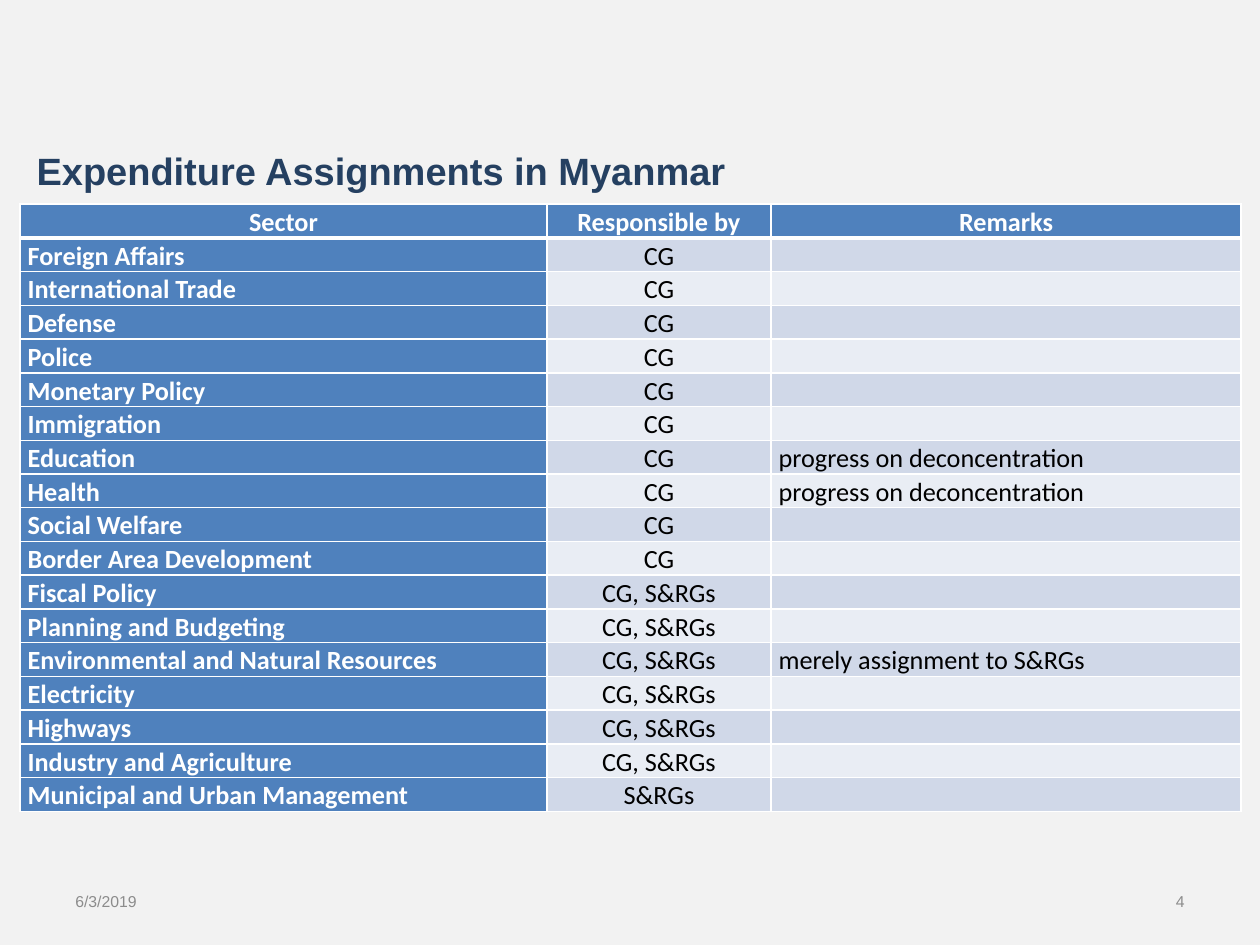
from dataclasses import dataclass

from lxml.etree import SubElement
from pptx import Presentation
from pptx.dml.color import RGBColor as Rgb
from pptx.enum.text import MSO_ANCHOR as Anchor, PP_ALIGN as Align
from pptx.oxml.ns import qn
from pptx.util import Inches, Pt


@dataclass(frozen=True)
class Theme:
    back: str = "F2F2F2"
    navy: str = "254061"
    grey: str = "8C8C8C"
    blue: str = "4F81BD"
    white: str = "FFFFFF"
    black: str = "000000"
    bands: tuple = ("D0D8E8", "E9EDF4")
    head: str = "Arial"
    body: str = "Calibri"
    title: float = 21.7
    cell: float = 15
    small: float = 9


THEME = Theme()
HEADS = ("Sector", "Responsible by", "Remarks")
WIDTHS = (4.18, 1.78, 3.73)
HEIGHT = 0.26

# Sectors grouped by the level of government in charge
GROUPS = {
    "CG": ("Foreign Affairs", "International Trade", "Defense", "Police",
           "Monetary Policy", "Immigration", "Education", "Health",
           "Social Welfare", "Border Area Development"),
    "CG, S&RGs": ("Fiscal Policy", "Planning and Budgeting",
                  "Environmental and Natural Resources", "Electricity",
                  "Highways", "Industry and Agriculture"),
    "S&RGs": ("Municipal and Urban Management",),
}
NOTES = {
    "Education": "progress on deconcentration",
    "Health": "progress on deconcentration",
    "Environmental and Natural Resources": "merely assignment to S&RGs",
}


def assign(item, values):
    for name, value in values.items():
        setattr(item, name, value)


def write(part, text, face, size, color, bold=False, align=Align.LEFT):
    part.alignment = align
    if not text:
        # An empty cell still needs its type size to keep the row low
        SubElement(part._p, qn("a:endParaRPr"), sz=str(int(size * 100)))
        return
    run = part.add_run()
    run.text = text
    assign(run.font, {"name": face, "size": Pt(size), "bold": bold})
    run.font.color.rgb = Rgb.from_string(color)


def add_title(slide, text):
    title = slide.shapes.title
    assign(title, {"left": Inches(0.19), "top": Inches(1.12),
                   "width": Inches(9), "height": Inches(0.4)})
    assign(title.text_frame, {"vertical_anchor": Anchor.TOP,
                              "word_wrap": True})
    write(title.text_frame.paragraphs[0], text, THEME.head, THEME.title,
          THEME.navy, True)


def add_foot(slide, text, left, align):
    box = slide.shapes.add_textbox(
        Inches(left), Inches(6.95), Inches(2.33), Inches(0.4))
    assign(box.text_frame, {"vertical_anchor": Anchor.MIDDLE,
                            "word_wrap": True})
    write(box.text_frame.paragraphs[0], text, THEME.head, THEME.small,
          THEME.grey, align=align)


def add_edge(cell, side, points):
    line = SubElement(cell._tc.get_or_add_tcPr(), qn(f"a:ln{side}"),
                      w=str(Pt(points)))
    fill = SubElement(line, qn("a:solidFill"))
    SubElement(fill, qn("a:srgbClr"), val=THEME.white)


def style_cell(cell, text, row, col):
    strong = row == 0 or col == 0
    # Borders go first, as the schema puts them ahead of the fill
    thick = {"T": 3 if row == 1 else 1, "B": 3 if row == 0 else 1}
    for side in "LRTB":
        add_edge(cell, side, thick.get(side, 1))
    cell.fill.solid()
    color = THEME.blue if strong else THEME.bands[(row - 1) % 2]
    cell.fill.fore_color.rgb = Rgb.from_string(color)
    assign(cell, {"margin_left": Inches(0.06), "margin_right": Inches(0.06),
                  "margin_top": 0, "margin_bottom": 0})
    part = cell.text_frame.paragraphs[0]
    part.line_spacing = 1.07
    align = Align.CENTER if row == 0 or col == 1 else Align.JUSTIFY
    write(part, text, THEME.body, THEME.cell,
          THEME.white if strong else THEME.black, strong, align)


def add_grid(slide, rows):
    table = slide.shapes.add_table(
        len(rows), len(WIDTHS), Inches(0.16), Inches(1.62),
        Inches(sum(WIDTHS)), Inches(HEIGHT * len(rows))).table
    assign(table, {"first_col": True, "horz_banding": False})
    for col, width in enumerate(WIDTHS):
        table.columns[col].width = Inches(width)
    for row, texts in enumerate(rows):
        table.rows[row].height = Inches(HEIGHT)
        for col, text in enumerate(texts):
            style_cell(table.cell(row, col), text, row, col)


def main():
    deck = Presentation()
    assign(deck, {"slide_width": Inches(10), "slide_height": Inches(7.5)})
    slide = deck.slides.add_slide(deck.slide_layouts[5])
    slide.background.fill.solid()
    slide.background.fill.fore_color.rgb = Rgb.from_string(THEME.back)

    # Date and slide number
    add_foot(slide, "6/3/2019", 0.5, Align.LEFT)
    add_foot(slide, "4", 7.17, Align.RIGHT)

    # Table of sectors under the title
    rows = [HEADS] + [(name, level, NOTES.get(name, ""))
                      for level, names in GROUPS.items() for name in names]
    add_grid(slide, rows)
    add_title(slide, "Expenditure Assignments in Myanmar")
    deck.save("out.pptx")


if __name__ == "__main__":
    main()
